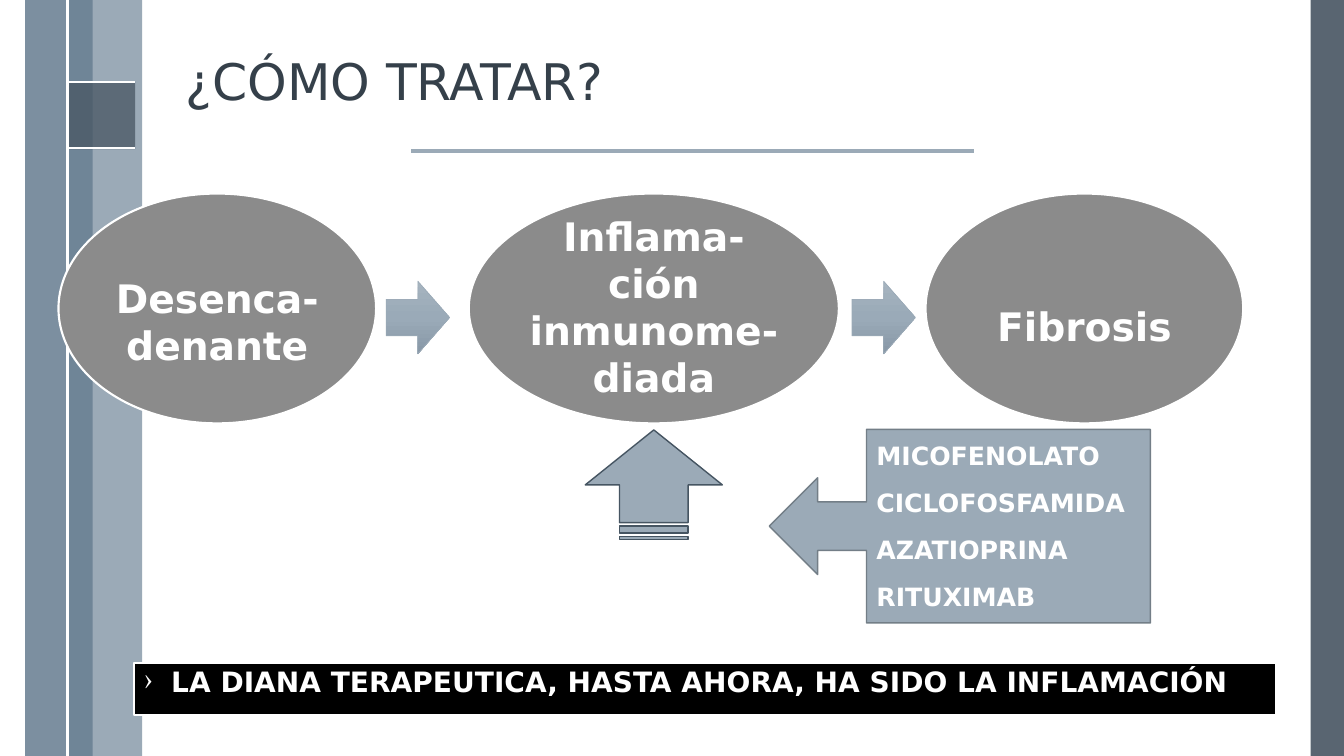
from dataclasses import dataclass

from lxml.etree import SubElement
from pptx import Presentation
from pptx.dml.color import RGBColor
from pptx.enum.shapes import MSO_CONNECTOR, MSO_SHAPE
from pptx.enum.text import MSO_ANCHOR, MSO_AUTO_SIZE, PP_ALIGN
from pptx.oxml.ns import qn
from pptx.util import Inches, Pt

FONT = "DejaVu Sans"
WHITE = "FFFFFF"
STEEL = "9BAAB7"
SLATE = "475562"
GREY = "8B8B8B"
ARROW_GRADIENT = ((0, "A6B4BF"), (50, "9AAAB8"), (100, "8797A6"))


@dataclass
class Band:
    left: float
    top: float
    width: float
    height: float
    color: str
    opacity: int = 100


@dataclass
class Rule:
    start: tuple[float, float]
    end: tuple[float, float]
    color: str = WHITE
    width: float = 1.5


@dataclass
class Stage:
    left: float
    width: float
    text: str
    side_inset: float
    top_inset: float
    bottom_inset: float


BANDS = [
    Band(13, 0, 0.33, 7.5, SLATE, 90),
    Band(0.67, 0, 0.74, 7.5, STEEL),
    Band(0.25, 0, 0.67, 7.5, "6A8093", 88),
    Band(0.67, 0.81, 0.67, 0.67, SLATE, 75),
]
RULES = [
    Rule((0.67, 0.81), (1.34, 0.81)),
    Rule((0.67, 1.47), (1.34, 1.47)),
    Rule((0.67, 0), (0.67, 7.5)),
    Rule((4.08, 1.5), (9.66, 1.5), STEEL, 2.5),
]
STAGES = [
    Stage(4.65, 3.67, "Inflama- ción inmunome-diada", 0, 0, 0.05),
    Stage(9.18, 3.15, "Fibrosis", 0.1, 0.34, 0),
    Stage(0.58, 3.15, "Desenca-denante", 0, 0.26, 0),
]
STAGE_ARROW_LEFTS = (3.83, 8.45)
TREATMENTS = ("MICOFENOLATO", "CICLOFOSFAMIDA", "AZATIOPRINA", "RITUXIMAB")


def rgb(color: str) -> RGBColor:
    return RGBColor.from_string(color)


def add_filled_shape(slide, kind, left: float, top: float, width: float, height: float,
                     fill: str, line: str | None = None, line_width: float = 1):
    shape = slide.shapes.add_shape(kind, Inches(left), Inches(top), Inches(width), Inches(height))
    shape.shadow.inherit = False
    shape.fill.solid()
    shape.fill.fore_color.rgb = rgb(fill)
    if line:
        shape.line.color.rgb = rgb(line)
        shape.line.width = Pt(line_width)
    else:
        shape.line.fill.background()
    return shape


def format_paragraph(paragraph, size: float, color: str = WHITE, bold: bool = True,
                     alignment=PP_ALIGN.LEFT) -> None:
    paragraph.alignment = alignment
    font = paragraph.font
    font.name = FONT
    font.size = Pt(size)
    font.bold = bold
    font.color.rgb = rgb(color)


def add_band(slide, band: Band) -> None:
    shape = add_filled_shape(slide, MSO_SHAPE.RECTANGLE, band.left, band.top,
                             band.width, band.height, band.color)
    if band.opacity < 100:
        color = shape._element.spPr.find(qn("a:solidFill"))[0]
        SubElement(color, qn("a:alpha"), val=str(band.opacity * 1000))


def add_rule(slide, rule: Rule) -> None:
    points = [Inches(value) for value in rule.start + rule.end]
    connector = slide.shapes.add_connector(MSO_CONNECTOR.STRAIGHT, *points)
    connector.line.color.rgb = rgb(rule.color)
    connector.line.width = Pt(rule.width)
    SubElement(connector._element.spPr, qn("a:effectLst"))


def add_stage(slide, stage: Stage) -> None:
    shape = add_filled_shape(slide, MSO_SHAPE.OVAL, stage.left, 1.92, stage.width, 2.28,
                             GREY, WHITE, 1.5)
    frame = shape.text_frame
    frame.word_wrap = True
    frame.vertical_anchor = MSO_ANCHOR.MIDDLE
    frame.margin_left = frame.margin_right = Inches(stage.side_inset)
    frame.margin_top = Inches(stage.top_inset)
    frame.margin_bottom = Inches(stage.bottom_inset)
    frame.text = stage.text
    format_paragraph(frame.paragraphs[0], 28, alignment=PP_ALIGN.CENTER)


def add_stage_arrow(slide, left: float) -> None:
    arrow = add_filled_shape(slide, MSO_SHAPE.RIGHT_ARROW, left, 2.79, 0.63, 0.72,
                             STEEL, STEEL, 0.5)
    arrow.fill.gradient()
    arrow.fill.gradient_angle = 270
    stops = arrow._element.spPr.find(qn("a:gradFill")).find(qn("a:gsLst"))
    for stop in list(stops):
        stops.remove(stop)
    for position, color in ARROW_GRADIENT:
        stop = SubElement(stops, qn("a:gs"), pos=str(position * 1000))
        SubElement(stop, qn("a:srgbClr"), val=color)


def add_treatments(slide) -> None:
    callout = add_filled_shape(slide, MSO_SHAPE.LEFT_ARROW_CALLOUT, 7.63, 4.26, 3.78, 1.92,
                               STEEL, "737E87")
    for index, value in enumerate((0.25, 0.25, 0.25, 0.745)):
        callout.adjustments[index] = value
    frame = callout.text_frame
    frame.word_wrap = True
    frame.vertical_anchor = MSO_ANCHOR.MIDDLE
    frame.text = "\n".join(TREATMENTS)
    for index, paragraph in enumerate(frame.paragraphs):
        if index:
            paragraph.space_before = Pt(12)
        format_paragraph(paragraph, 18)


def add_conclusion(slide) -> None:
    bar = add_filled_shape(slide, MSO_SHAPE.RECTANGLE, 1.33, 6.58, 11.33, 0.51,
                           "000000", WHITE, 1.5)
    frame = bar.text_frame
    frame.word_wrap = True
    frame.vertical_anchor = MSO_ANCHOR.TOP
    frame.text = "LA DIANA TERAPEUTICA, HASTA AHORA, HA SIDO LA INFLAMACIÓN"
    paragraph = frame.paragraphs[0]
    paragraph.line_spacing = 0.9
    properties = paragraph._p.get_or_add_pPr()
    properties.set("marL", str(Inches(0.27)))
    properties.set("indent", str(Inches(-0.27)))
    SubElement(properties, qn("a:buChar"), char="›")
    format_paragraph(paragraph, 20)


def format_title(title) -> None:
    title.left, title.top = Inches(1.74), Inches(0.19)
    title.width, title.height = Inches(10.7), Inches(0.97)
    frame = title.text_frame
    frame.text = "¿CÓMO TRATAR?"
    frame.word_wrap = True
    frame.auto_size = MSO_AUTO_SIZE.NONE
    frame.vertical_anchor = MSO_ANCHOR.BOTTOM
    paragraph = frame.paragraphs[0]
    paragraph.line_spacing = 0.9
    format_paragraph(paragraph, 36, "35404A", bold=False)


def main() -> None:
    presentation = Presentation()
    presentation.slide_width = Inches(13.33)
    presentation.slide_height = Inches(7.5)
    slide = presentation.slides.add_slide(presentation.slide_layouts[5])
    format_title(slide.shapes.title)
    for band in BANDS:
        add_band(slide, band)
    for rule in RULES:
        add_rule(slide, rule)
    add_conclusion(slide)
    for stage in STAGES:
        add_stage(slide, stage)
    target_arrow = add_filled_shape(slide, MSO_SHAPE.STRIPED_RIGHT_ARROW, 5.94, 4.13, 1.09, 1.36,
                                    STEEL, "465562")
    target_arrow.rotation = 270
    for left in STAGE_ARROW_LEFTS:
        add_stage_arrow(slide, left)
    add_treatments(slide)
    presentation.save("out.pptx")


if __name__ == "__main__":
    main()
